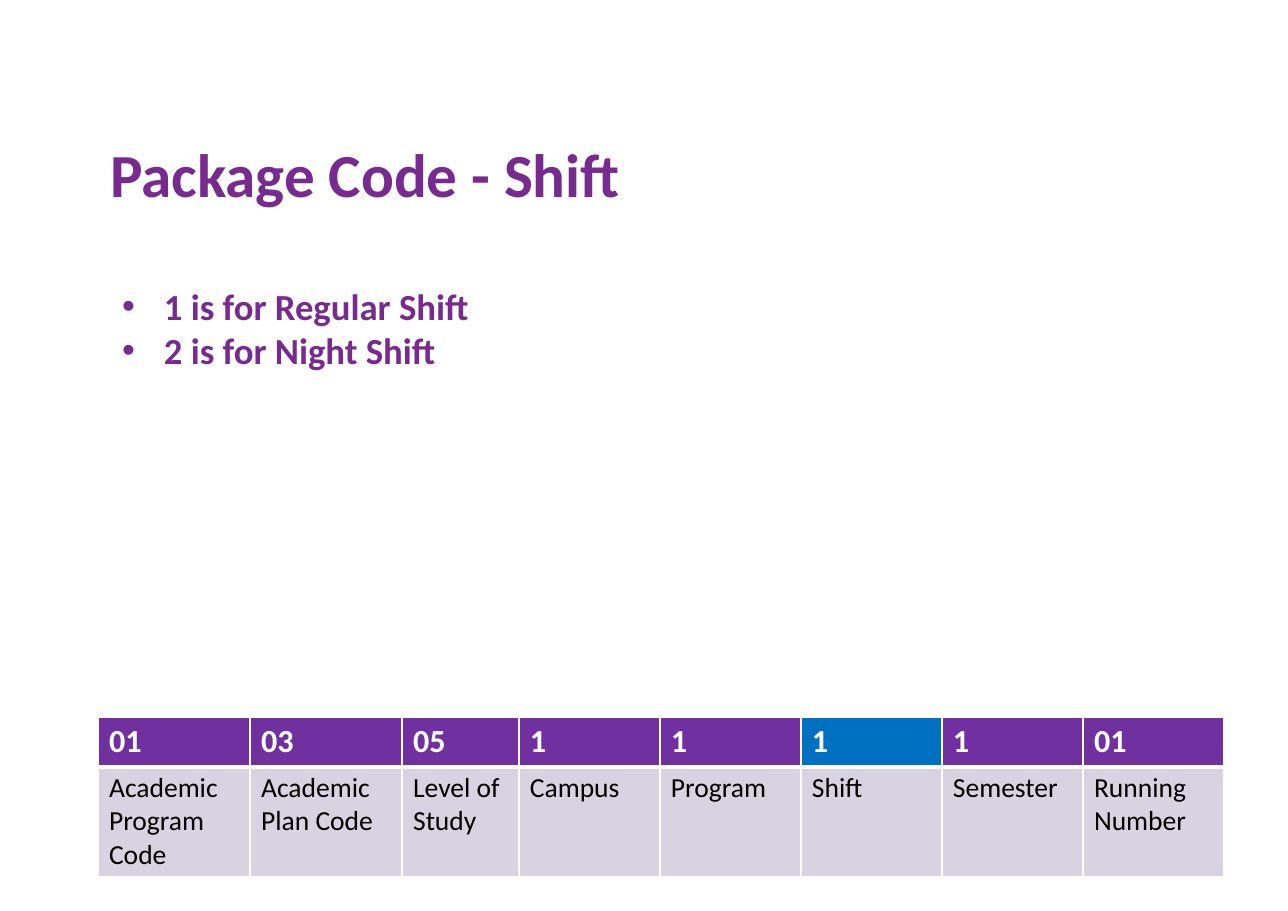
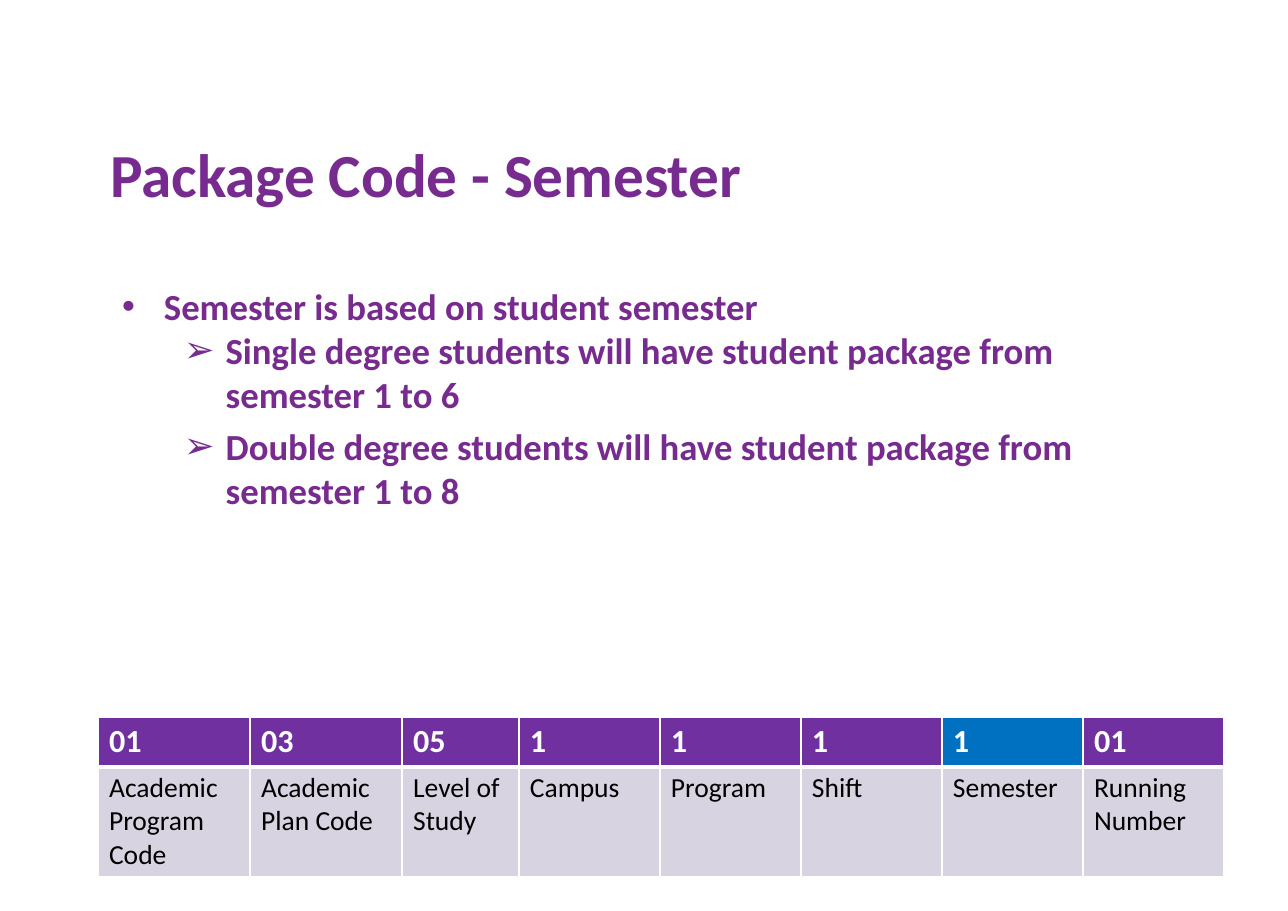
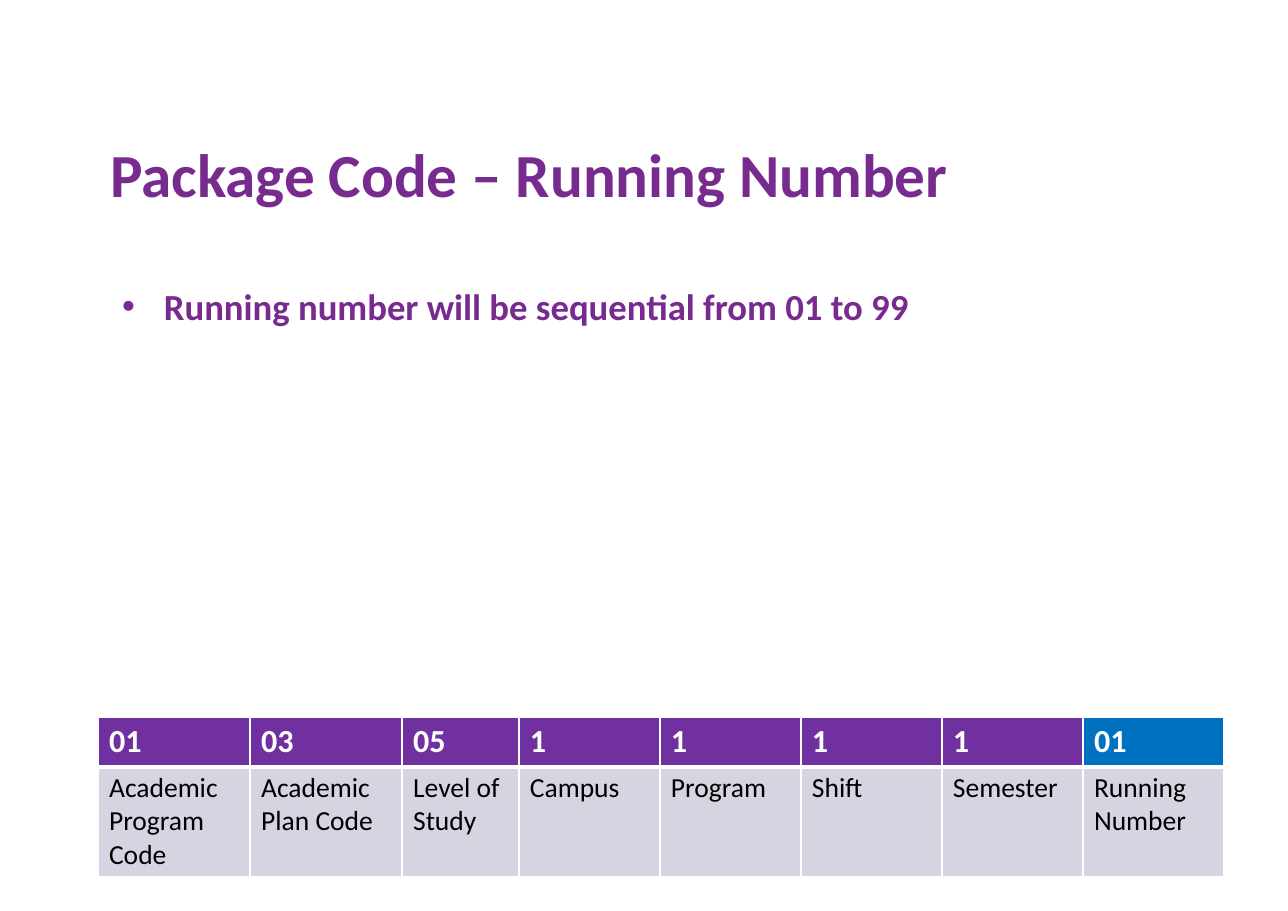
from lxml.etree import SubElement
from pptx import Presentation
from pptx.dml.color import RGBColor
from pptx.enum.text import MSO_ANCHOR as Anchor, MSO_AUTO_SIZE as AutoSize
from pptx.oxml.ns import qn
from pptx.util import Emu, Pt

# Shared style
PX = 9144  # EMU per px, 100 px to the inch
FONT = "Calibri"
TITLE_PURPLE = RGBColor(0x78, 0x2B, 0x8F)
HEADER_PURPLE = RGBColor(0x70, 0x30, 0xA0)
HIGHLIGHT_BLUE = RGBColor(0x00, 0x70, 0xC0)
BODY_LILAC = RGBColor(0xD8, 0xD3, 0xE0)
WHITE = RGBColor(0xFF, 0xFF, 0xFF)
BLACK = RGBColor(0x00, 0x00, 0x00)

# Parts of the package code: digits, meaning, column width
CODE_PARTS = [
    ("01", "Academic Program Code", 138),
    ("03", "Academic Plan Code", 138),
    ("05", "Level of Study", 106),
    ("1", "Campus", 128),
    ("1", "Program", 128),
    ("1", "Shift", 128),
    ("1", "Semester", 128),
    ("01", "Running Number", 128),
]
ROW_HEIGHTS = (45, 100)

# Bullet character, text indent and space after, by level
BULLETS = [("•", 38, 0), ("➢", 94, 5)]
HANGING = 38

# Title, highlighted part, (level, text) points
SLIDES = [
    ("Package Code - Shift", "Shift", [
        (0, "1 is for Regular Shift"),
        (0, "2 is for Night Shift"),
    ]),
    ("Package Code - Semester", "Semester", [
        (0, "Semester is based on student semester"),
        (1, "Single degree students will have student package from semester 1 to 6"),
        (1, "Double degree students will have student package from semester 1 to 8"),
    ]),
    ("Package Code – Running Number", "Running Number", [
        (0, "Running number will be sequential from 01 to 99"),
    ]),
]


def px(length):
    return Emu(length * PX)


def format_runs(paragraph, size, color, bold):
    for run in paragraph.runs:
        run.font.name = FONT
        run.font.size = Pt(size)
        run.font.bold = bold
        run.font.color.rgb = color


def add_text_box(slide, left, top, width, height, inset_x, inset_y):
    box = slide.shapes.add_textbox(px(left), px(top), px(width), px(height))
    frame = box.text_frame
    frame.word_wrap = True
    frame.margin_left = frame.margin_right = px(inset_x)
    frame.margin_top = frame.margin_bottom = px(inset_y)
    return frame


def add_title(slide, title):
    frame = add_text_box(slide, 89, 88, 1066, 138, 11, 6)
    frame.vertical_anchor = Anchor.MIDDLE
    frame.text = title
    format_runs(frame.paragraphs[0], 40, TITLE_PURPLE, True)


def set_bullet(paragraph, level):
    character, indent, space_after = BULLETS[level]
    paragraph.level = level
    properties = paragraph._p.get_or_add_pPr()
    properties.set("marL", str(px(indent)))
    properties.set("indent", str(px(-HANGING)))
    SubElement(properties, qn("a:buFont"), typeface="Arial")
    SubElement(properties, qn("a:buChar"), char=character)
    paragraph.space_after = Pt(space_after)


def add_points(slide, points):
    frame = add_text_box(slide, 101, 253, 934, 91, 10, 5)
    frame.auto_size = AutoSize.SHAPE_TO_FIT_TEXT
    frame.text = "\n".join(text for _, text in points)
    for paragraph, (level, _) in zip(frame.paragraphs, points):
        set_bullet(paragraph, level)
        format_runs(paragraph, 24, TITLE_PURPLE, True)


def set_borders(cell, **widths):
    properties = cell._tc.get_or_add_tcPr()
    for side in "LRTB":
        line = SubElement(properties, qn(f"a:ln{side}"), w=str(Pt(widths.get(side, 1))))
        fill = SubElement(line, qn("a:solidFill"))
        SubElement(fill, qn("a:srgbClr"), val=str(WHITE))


def fill_cell(cell, text, fill, size, color, bold):
    cell.text = text
    cell.margin_left = cell.margin_right = px(10)
    cell.margin_top = cell.margin_bottom = px(4)
    cell.fill.solid()
    cell.fill.fore_color.rgb = fill
    format_runs(cell.text_frame.paragraphs[0], size, color, bold)


def add_code_table(slide, highlighted):
    total_width = sum(width for _, _, width in CODE_PARTS)
    table = slide.shapes.add_table(
        len(ROW_HEIGHTS), len(CODE_PARTS), px(89), px(651),
        px(total_width), px(sum(ROW_HEIGHTS))).table
    for row, height in zip(table.rows, ROW_HEIGHTS):
        row.height = px(height)
    for index, (digits, meaning, width) in enumerate(CODE_PARTS):
        table.columns[index].width = px(width)
        header, body = table.cell(0, index), table.cell(1, index)
        # A thick rule separates the two rows
        set_borders(header, B=3)
        set_borders(body, T=3)
        header_fill = HIGHLIGHT_BLUE if meaning == highlighted else HEADER_PURPLE
        fill_cell(header, digits, header_fill, 21, WHITE, True)
        fill_cell(body, meaning, BODY_LILAC, 18, BLACK, False)


def main():
    presentation = Presentation()
    presentation.slide_width = px(1169)
    presentation.slide_height = px(827)
    blank_layout = presentation.slide_layouts[6]
    for title, highlighted, points in SLIDES:
        slide = presentation.slides.add_slide(blank_layout)
        add_title(slide, title)
        add_points(slide, points)
        add_code_table(slide, highlighted)
    presentation.save("out.pptx")


if __name__ == "__main__":
    main()
